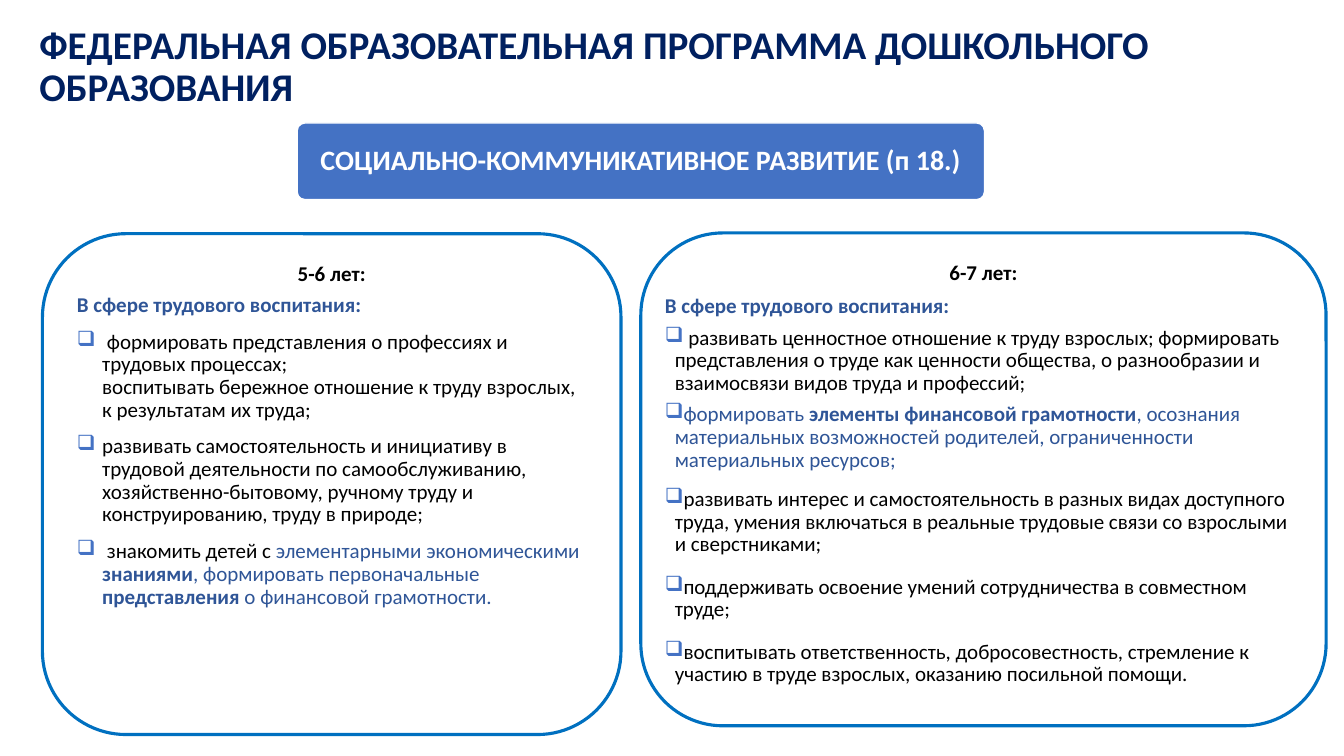
import pptx
import pptx.dml.color
import pptx.enum.shapes
import pptx.enum.text
import pptx.oxml
import pptx.oxml.ns
import pptx.util
from pptx.util import Cm, Pt

FONT = "Calibri"
NAVY, BLUE, ACCENT = "002060", "0070C0", "4472C4"
DARK_BLUE, BLACK, WHITE = "2F5597", "000000", "FFFFFF"
ALIGN = pptx.enum.text.PP_ALIGN
ANCHOR = pptx.enum.text.MSO_ANCHOR

SPHERE = "В сфере трудового воспитания:"

# Each goal: (space before, space after, runs); each run: (text, colour, bold)
GOALS_5_6 = [
    (10, 0, [(" формировать представления о профессиях и трудовых процессах;\n"
              "воспитывать бережное отношение к труду взрослых, "
              "к результатам их труда;", BLACK, False)]),
    (10, 0, [("развивать самостоятельность и инициативу в трудовой деятельности "
              "по самообслуживанию, хозяйственно-бытовому, ручному труду и "
              "конструированию, труду в природе;", BLACK, False)]),
    (10, 0, [(" знакомить детей с ", BLACK, False),
             ("элементарными экономическими ", DARK_BLUE, False),
             ("знаниями", DARK_BLUE, True),
             (", формировать первоначальные ", DARK_BLUE, False),
             ("представления", DARK_BLUE, True),
             (" о финансовой грамотности.", DARK_BLUE, False)]),
]
GOALS_6_7 = [
    (6, 0, [(" развивать ценностное отношение к труду взрослых; формировать "
             "представления о труде как ценности общества, о разнообразии и "
             "взаимосвязи видов труда и профессий;", BLACK, False)]),
    (6, 0, [("формировать ", DARK_BLUE, False),
            ("элементы финансовой грамотности", DARK_BLUE, True),
            (", осознания материальных возможностей родителей, ограниченности "
             "материальных ресурсов;", DARK_BLUE, False)]),
    (12, 2, [("развивать интерес и самостоятельность в разных видах доступного "
              "труда, умения включаться в реальные трудовые связи со взрослыми "
              "и сверстниками;", BLACK, False)]),
    (12, 2, [("поддерживать освоение умений сотрудничества в совместном труде;",
              BLACK, False)]),
    (12, 2, [("воспитывать ответственность, добросовестность, стремление к "
              "участию в труде взрослых, оказанию посильной помощи.",
              BLACK, False)]),
]


def rgb(value):
    return pptx.dml.color.RGBColor.from_string(value)


def add_run(paragraph, text, size, color, bold):
    """Add text in one format; a newline becomes a line break."""
    for number, line in enumerate(text.split("\n")):
        if number:
            paragraph.add_line_break()
        run = paragraph.add_run()
        run.text = line
        run.font.name = FONT
        run.font.size = Pt(size)
        run.font.bold = bold
        run.font.color.rgb = rgb(color)


def fill_paragraph(paragraph, runs, size, align=ALIGN.LEFT, before=0, after=0):
    paragraph.alignment = align
    paragraph.line_spacing = 0.9
    paragraph.space_before = Pt(before)
    paragraph.space_after = Pt(after)
    for text, color, bold in runs:
        add_run(paragraph, text, size, color, bold)


def add_bullet(paragraph, indent):
    properties = paragraph._p.get_or_add_pPr()
    properties.set("marL", str(indent))
    properties.set("indent", str(-indent))
    namespace = pptx.oxml.ns.nsdecls("a")
    for xml in (
        f'<a:buClr {namespace}><a:srgbClr val="{ACCENT}"/></a:buClr>',
        f'<a:buChar {namespace} char="❑"/>',
    ):
        properties.append(pptx.oxml.parse_xml(xml))


def add_rounded_box(slide, left, top, width, height, fill, line, weight, radius):
    box = slide.shapes.add_shape(
        pptx.enum.shapes.MSO_SHAPE.ROUNDED_RECTANGLE,
        Cm(left), Cm(top), Cm(width), Cm(height))
    box.adjustments[0] = radius
    box.shadow.inherit = False
    box.fill.solid()
    box.fill.fore_color.rgb = rgb(fill)
    box.line.color.rgb = rgb(line)
    box.line.width = Pt(weight)
    box.text_frame.word_wrap = True
    return box


def set_title(slide, text):
    title = slide.shapes.title
    title.left, title.top = Cm(0.74), Cm(0.51)
    title.width, title.height = Cm(29.21), Cm(2.41)
    frame = title.text_frame
    frame.word_wrap = True
    frame.auto_size = pptx.enum.text.MSO_AUTO_SIZE.NONE
    frame.vertical_anchor = ANCHOR.MIDDLE
    fill_paragraph(frame.paragraphs[0], [(text, NAVY, True)], 28)


def add_area_banner(slide, text):
    banner = add_rounded_box(slide, 7.49, 3.1, 17.32, 1.93, ACCENT, WHITE, 1, 0.1)
    banner.text_frame.vertical_anchor = ANCHOR.MIDDLE
    fill_paragraph(banner.text_frame.paragraphs[0], [(text, WHITE, True)], 20,
                   ALIGN.CENTER)


def add_age_card(slide, bounds, age, age_after, goals, indent, side_inset):
    card = add_rounded_box(slide, *bounds, WHITE, BLUE, 2.25, 0.1667)
    frame = card.text_frame
    frame.vertical_anchor = ANCHOR.TOP
    frame.margin_left = frame.margin_right = Cm(side_inset)
    fill_paragraph(frame.paragraphs[0], [(age, BLACK, True)], 15,
                   ALIGN.CENTER, after=age_after)
    fill_paragraph(frame.add_paragraph(), [(SPHERE, DARK_BLUE, True)], 15, before=6)
    for before, after, runs in goals:
        goal = frame.add_paragraph()
        fill_paragraph(goal, runs, 15, before=before, after=after)
        add_bullet(goal, Cm(indent))


def main():
    deck = pptx.Presentation()
    deck.slide_width, deck.slide_height = Cm(33.87), Cm(19.05)
    slide = deck.slides.add_slide(deck.slide_layouts.get_by_name("Title Only"))
    set_title(slide, "ФЕДЕРАЛЬНАЯ ОБРАЗОВАТЕЛЬНАЯ ПРОГРАММА ДОШКОЛЬНОГО ОБРАЗОВАНИЯ")
    add_area_banner(slide, "СОЦИАЛЬНО-КОММУНИКАТИВНОЕ РАЗВИТИЕ (п 18.)")
    add_age_card(slide, (1.07, 5.89, 14.58, 12.62), "5-6 лет:", 0,
                 GOALS_5_6, 0.64, 0.25)
    add_age_card(slide, (16.15, 5.87, 17.27, 12.42), "6-7 лет:", 2,
                 GOALS_6_7, 0.25, 0)
    deck.save("out.pptx")


if __name__ == "__main__":
    main()
